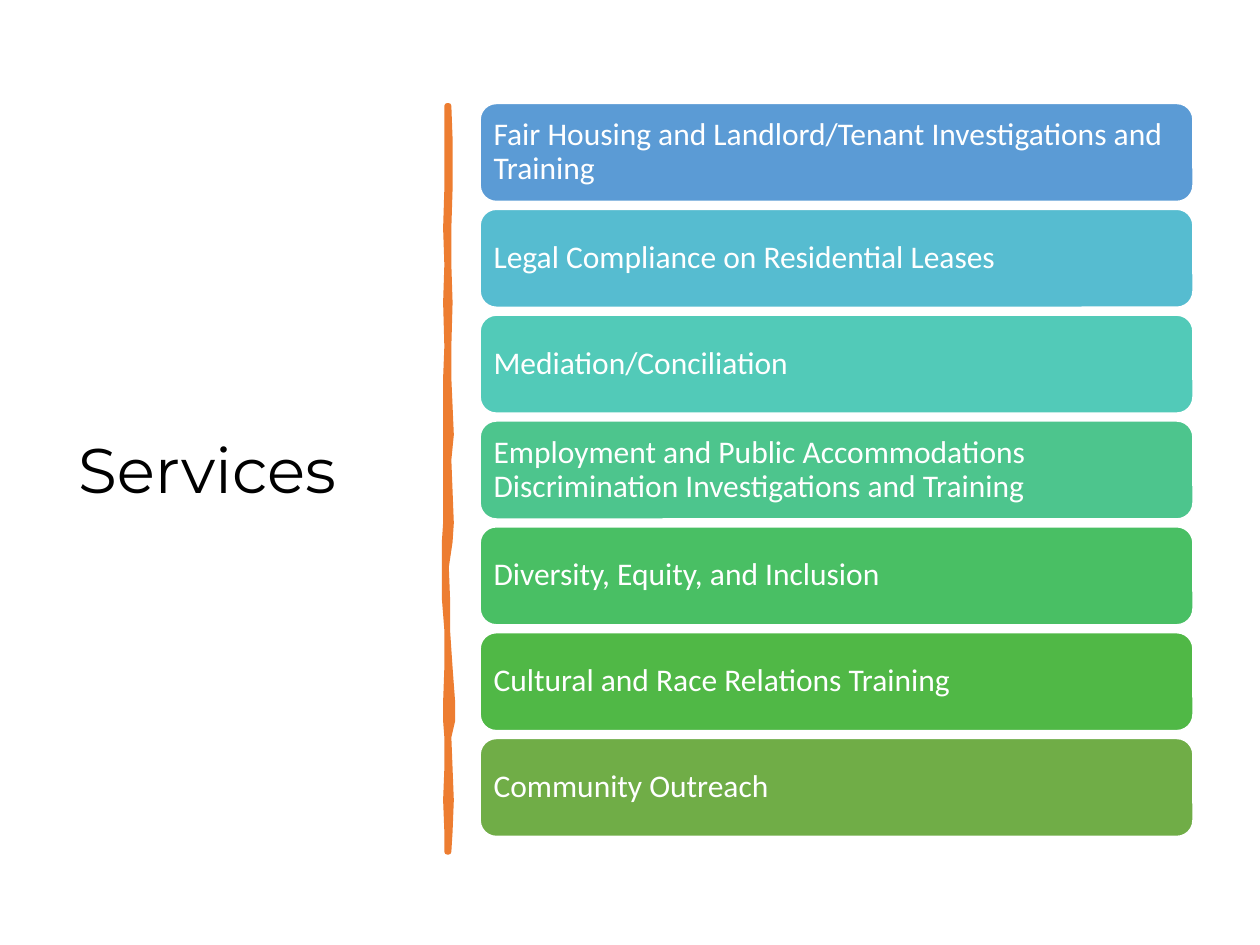
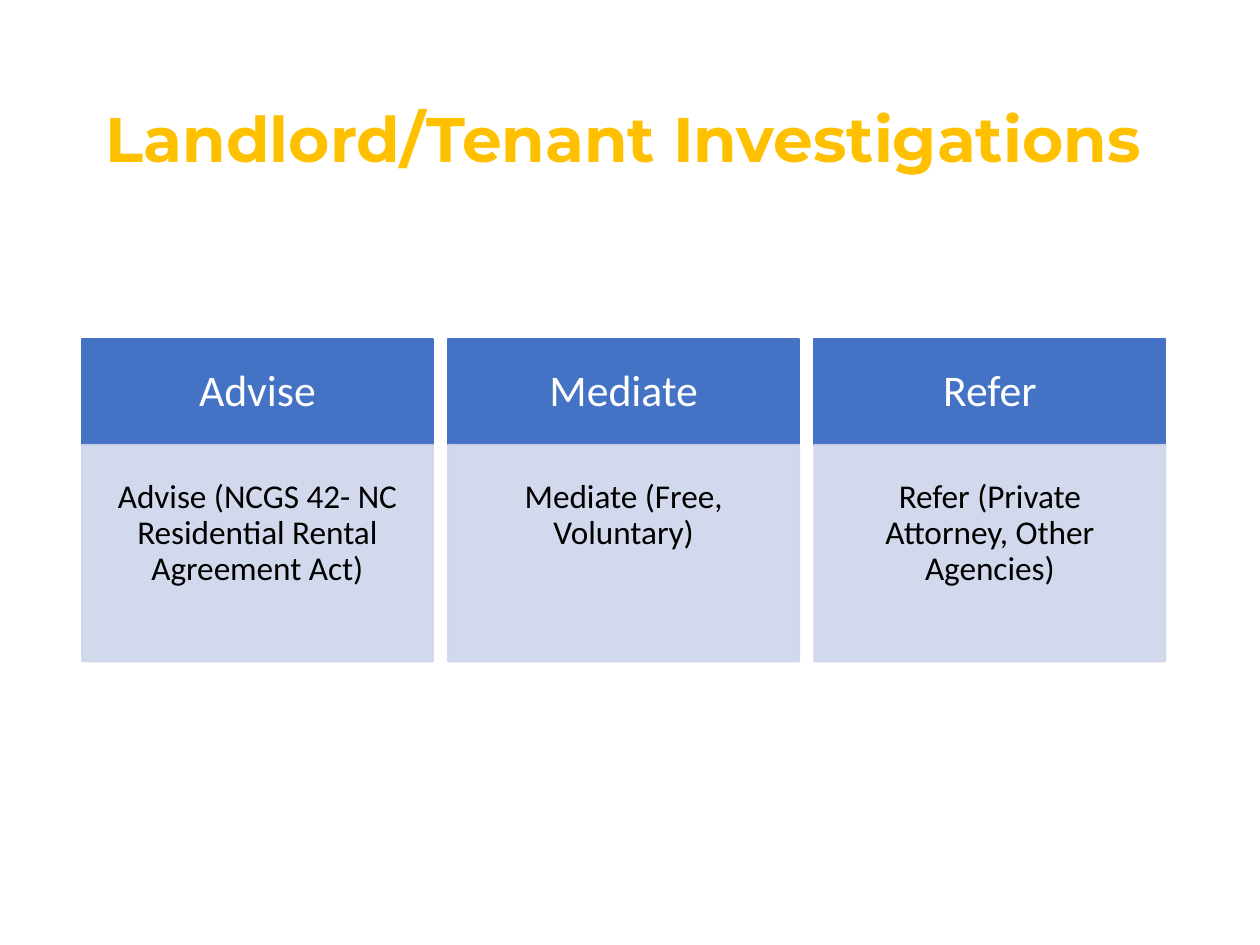
from dataclasses import dataclass

from lxml.etree import SubElement
from pptx import Presentation
from pptx.dml.color import RGBColor
from pptx.enum.shapes import MSO_SHAPE
from pptx.enum.text import MSO_ANCHOR, MSO_AUTO_SIZE, PP_ALIGN
from pptx.oxml.ns import qn
from pptx.slide import Slide
from pptx.text.text import TextFrame
from pptx.util import Inches, Pt

# Shared look
WIDTH, HEIGHT = 10, 7.5
TITLE_ONLY = 5
TITLE_FONT, BODY_FONT = "Montserrat", "Calibri"
WHITE, BLACK, ORANGE, GOLD = "FFFFFF", "000000", "ED7D31", "FFC000"
BLUE, PALE_BLUE = "4472C4", "CFD5EA"
LINE_SPACING = 0.9


@dataclass(frozen=True)
class Box:
    left: float
    top: float
    width: float
    height: float

    def emu(self) -> list[int]:
        return [Inches(n) for n in (self.left, self.top, self.width, self.height)]


@dataclass(frozen=True)
class Track:
    """Equal cells with equal gaps along one direction."""
    start: float
    span: float
    count: int
    gap: float

    @property
    def size(self) -> float:
        return (self.span - self.gap * (self.count - 1)) / self.count

    def at(self, index: int) -> float:
        return self.start + index * (self.size + self.gap)


@dataclass(frozen=True)
class TextStyle:
    font: str
    size: float
    color: str
    align: PP_ALIGN = PP_ALIGN.LEFT
    anchor: MSO_ANCHOR = MSO_ANCHOR.MIDDLE
    bold: bool = False


@dataclass(frozen=True)
class PanelStyle:
    kind: MSO_SHAPE
    fill: str
    line: str
    inset: float
    text: TextStyle
    opacity: int = 100


@dataclass(frozen=True)
class Service:
    name: str
    color: str


@dataclass(frozen=True)
class Step:
    heading: str
    detail: str


# Content
SERVICES = [
    Service("Fair Housing and Landlord/Tenant Investigations and Training", "5B9BD5"),
    Service("Legal Compliance on Residential Leases", "56BCD0"),
    Service("Mediation/Conciliation", "52CAB8"),
    Service("Employment and Public Accommodations Discrimination "
            "Investigations and Training", "4DC58D"),
    Service("Diversity, Equity, and Inclusion", "49BF64"),
    Service("Cultural and Race Relations Training", "50B846"),
    Service("Community Outreach", "70AD47"),
]
STEPS = [
    Step("Advise", "Advise (NCGS 42- NC Residential Rental Agreement Act)"),
    Step("Mediate", "Mediate (Free, Voluntary)"),
    Step("Refer", "Refer (Private Attorney, Other Agencies)"),
]

# Hand-drawn divider in hundredths of an inch: height, left edge, right edge
DIVIDER_UNIT = Inches(0.01)
DIVIDER_EDGES = [
    (84, 355, 356), (110, 355, 357), (150, 355, 357),
    (181, 354, 356), (210, 355, 356), (240, 354, 357),
    (275, 355, 356), (300, 354, 356), (345, 354, 358),
    (365, 354, 356), (415, 354, 358), (430, 353, 357),
    (450, 353, 354), (475, 353, 355), (500, 355, 355),
    (530, 355, 357), (557, 354, 359), (572, 354, 359),
    (585, 355, 356), (610, 355, 357), (635, 354, 358),
    (660, 355, 357), (676, 355, 356),
]


def rgb(color: str) -> RGBColor:
    return RGBColor.from_string(color)


def write(frame: TextFrame, text: str, style: TextStyle) -> None:
    frame.word_wrap = True
    frame.auto_size = MSO_AUTO_SIZE.NONE
    frame.vertical_anchor = style.anchor
    paragraph = frame.paragraphs[0]
    paragraph.alignment = style.align
    paragraph.line_spacing = LINE_SPACING
    run = paragraph.add_run()
    run.text = text
    run.font.name = style.font
    run.font.size = Pt(style.size)
    run.font.bold = style.bold
    run.font.color.rgb = rgb(style.color)


def add_titled_slide(deck: Presentation, title: str, box: Box, style: TextStyle) -> Slide:
    slide = deck.slides.add_slide(deck.slide_layouts[TITLE_ONLY])
    heading = slide.shapes.title
    heading.left, heading.top, heading.width, heading.height = box.emu()
    write(heading.text_frame, title, style)
    return slide


def add_panel(slide: Slide, box: Box, text: str, style: PanelStyle) -> None:
    panel = slide.shapes.add_shape(style.kind, *box.emu())
    panel.shadow.inherit = False
    panel.fill.solid()
    panel.fill.fore_color.rgb = rgb(style.fill)
    panel.line.color.rgb = rgb(style.line)
    panel.line.width = Pt(1)
    if style.opacity < 100:
        for color in panel._element.spPr.iter(qn("a:srgbClr")):
            SubElement(color, qn("a:alpha"), val=str(style.opacity * 1000))
    frame = panel.text_frame
    frame.margin_left = frame.margin_right = Inches(style.inset)
    frame.margin_top = frame.margin_bottom = Inches(style.inset)
    write(frame, text, style.text)


def add_divider(slide: Slide) -> None:
    left_side = [(left, y) for y, left, _ in DIVIDER_EDGES]
    right_side = [(right, y) for y, _, right in DIVIDER_EDGES]
    outline = left_side + right_side[::-1]
    builder = slide.shapes.build_freeform(*outline[0], scale=DIVIDER_UNIT)
    builder.add_line_segments(outline[1:], close=True)
    divider = builder.convert_to_shape()
    divider.shadow.inherit = False
    divider.fill.solid()
    divider.fill.fore_color.rgb = rgb(ORANGE)
    divider.line.color.rgb = rgb(ORANGE)
    divider.line.width = Pt(3.25)
    SubElement(divider.line._get_or_add_ln(), qn("a:round"))


def build_services(deck: Presentation) -> None:
    slide = add_titled_slide(deck, "Services", Box(0.52, 0.7, 2.8, 6.11),
                             TextStyle(TITLE_FONT, 36, BLACK))
    add_divider(slide)
    rows = Track(start=0.82, span=5.82, count=len(SERVICES), gap=0.06)
    label = TextStyle(BODY_FONT, 18, WHITE)
    for row, service in enumerate(SERVICES):
        add_panel(slide, Box(3.81, rows.at(row), 5.66, rows.size), service.name,
                  PanelStyle(MSO_SHAPE.ROUNDED_RECTANGLE, service.color, WHITE, 0.07, label))


def build_investigations(deck: Presentation) -> None:
    slide = add_titled_slide(deck, "Landlord/Tenant Investigations", Box(0.58, 0.4, 8.73, 1.45),
                             TextStyle(TITLE_FONT, 36, GOLD, PP_ALIGN.CENTER, bold=True))
    columns = Track(start=0.65, span=8.6, count=len(STEPS), gap=0.12)
    heading_top, heading_height, detail_height = 2.69, 0.84, 1.72
    heading = PanelStyle(MSO_SHAPE.RECTANGLE, BLUE, BLUE, 0.22,
                         TextStyle(BODY_FONT, 25, WHITE, PP_ALIGN.CENTER))
    detail = PanelStyle(MSO_SHAPE.RECTANGLE, PALE_BLUE, PALE_BLUE, 0.28,
                        TextStyle(BODY_FONT, 19, BLACK, PP_ALIGN.CENTER, MSO_ANCHOR.TOP),
                        opacity=90)
    for column, step in enumerate(STEPS):
        left = columns.at(column)
        add_panel(slide, Box(left, heading_top, columns.size, heading_height),
                  step.heading, heading)
        add_panel(slide, Box(left, heading_top + heading_height, columns.size, detail_height),
                  step.detail, detail)


def main() -> None:
    deck = Presentation()
    deck.slide_width, deck.slide_height = Inches(WIDTH), Inches(HEIGHT)
    build_services(deck)
    build_investigations(deck)
    deck.save("out.pptx")


if __name__ == "__main__":
    main()
